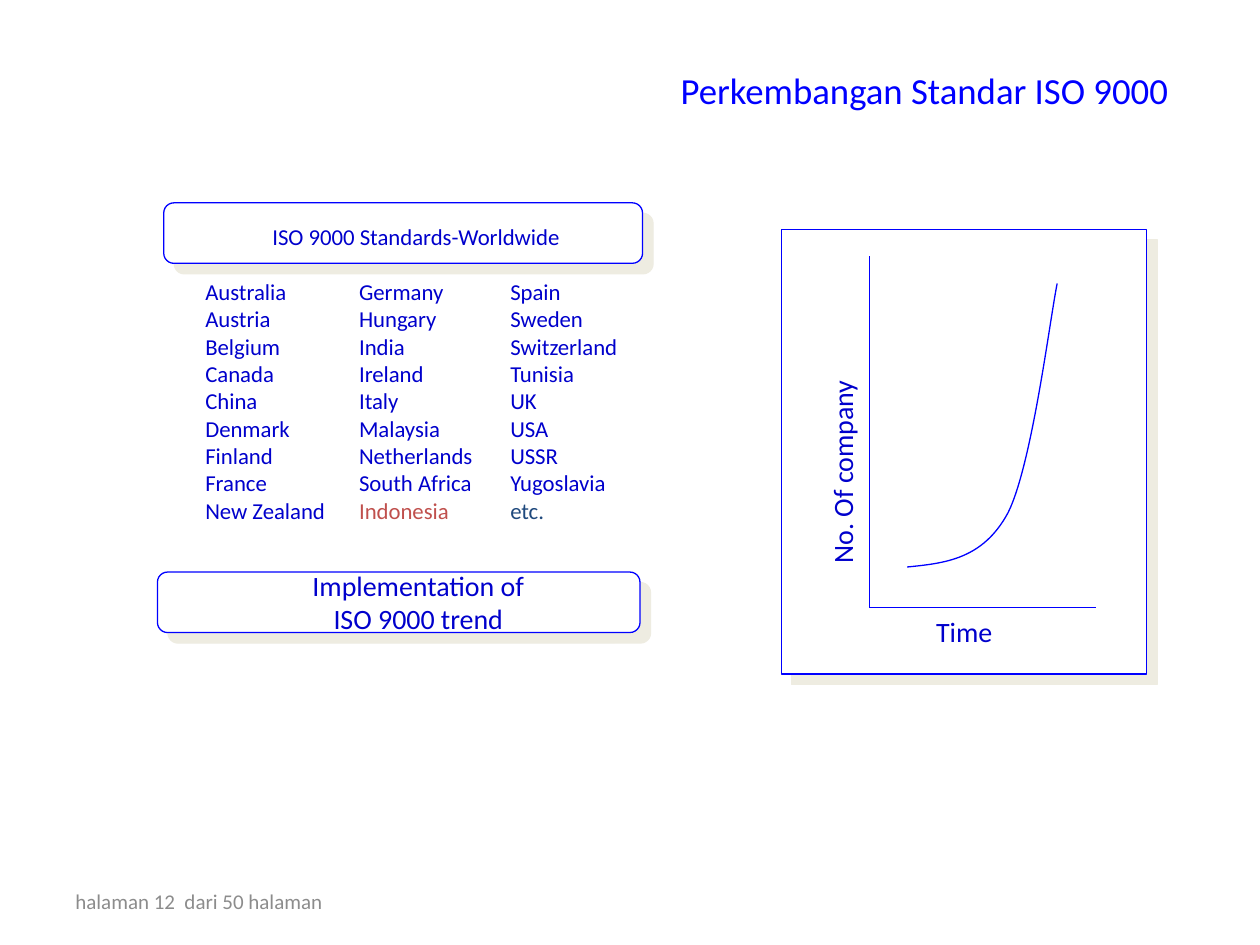
import dataclasses

import lxml.etree
import pptx
import pptx.dml.color
import pptx.enum.shapes
import pptx.enum.text
import pptx.oxml.ns
import pptx.util

Inches = pptx.util.Inches
Pt = pptx.util.Pt
qn = pptx.oxml.ns.qn
Align = pptx.enum.text.PP_ALIGN
Anchor = pptx.enum.text.MSO_ANCHOR
Shape = pptx.enum.shapes.MSO_SHAPE

COLOURS = {
    "line": "0000FF",
    "title": "0000FF",
    "text": "0000CC",
    "panel": "FFFFFF",
    "shadow": "EEECE1",
    "footer": "8C8C8C",
    "home": "C0504D",
    "rest": "1F497D",
}
FONT = "Calibri"
TAB_STOPS = (1.22, 2.42)
WIDE_INSETS = (0.13, 0.06)
COUNTRIES = (
    ("Australia", "Germany", "Spain"),
    ("Austria", "Hungary", "Sweden"),
    ("Belgium", "India", "Switzerland"),
    ("Canada", "Ireland", "Tunisia"),
    ("China", "Italy", "UK"),
    ("Denmark", "Malaysia", "USA"),
    ("Finland", "Netherlands", "USSR"),
    ("France", "South Africa", "Yugoslavia"),
    ("New Zealand", "Indonesia", "etc."),
)
SPECIAL_COLOURS = {"Indonesia": "home", "etc.": "rest"}
CURVE = (
    (7.2, 4.5),
    (7.5, 4.47), (7.8, 4.44), (8, 4.07),
    (8.19, 3.69), (8.33, 2.55), (8.39, 2.25),
)


@dataclasses.dataclass
class Panel:
    kind: Shape
    left: float
    top: float
    width: float
    height: float


@dataclasses.dataclass
class Axis:
    start: tuple[float, float]
    end: tuple[float, float]


PANELS = (
    Panel(Shape.ROUNDED_RECTANGLE, 1.3, 1.61, 3.8, 0.48),
    Panel(Shape.ROUNDED_RECTANGLE, 1.25, 4.54, 3.83, 0.48),
    Panel(Shape.RECTANGLE, 6.2, 1.82, 2.9, 3.53),
)
ORIGIN = (6.9, 4.82)
AXES = (Axis(ORIGIN, (8.7, 4.82)), Axis(ORIGIN, (6.9, 2.03)))


def colour(name: str) -> pptx.dml.color.RGBColor:
    return pptx.dml.color.RGBColor.from_string(COLOURS[name])


def style_line(line) -> None:
    line.color.rgb = colour("line")
    line.width = Pt(0.75)


def add_panel(page, panel: Panel) -> None:
    shape = page.shapes.add_shape(
        panel.kind, Inches(panel.left), Inches(panel.top),
        Inches(panel.width), Inches(panel.height),
    )
    shape.fill.solid()
    shape.fill.fore_color.rgb = colour("panel")
    style_line(shape.line)
    shape.shadow.inherit = False
    effects = shape._element.spPr.find(qn("a:effectLst"))
    shadow = lxml.etree.SubElement(
        effects, qn("a:outerShdw"), dist=str(Pt(8.5)), dir="2700000",
        algn="ctr", rotWithShape="0",
    )
    lxml.etree.SubElement(shadow, qn("a:srgbClr"), val=COLOURS["shadow"])


def add_axis(page, axis: Axis) -> None:
    connector = page.shapes.add_connector(
        pptx.enum.shapes.MSO_CONNECTOR.STRAIGHT,
        *(Inches(value) for value in axis.start + axis.end),
    )
    style_line(connector.line)
    lxml.etree.SubElement(connector._element.spPr, qn("a:effectLst"))


def add_curve(page, points: tuple) -> None:
    corners = [(Inches(x), Inches(y)) for x, y in points]
    builder = page.shapes.build_freeform(*corners[0])
    builder.add_line_segments(corners[1:], close=False)
    shape = builder.convert_to_shape()
    shape.fill.background()
    style_line(shape.line)
    shape.shadow.inherit = False
    outline = next(shape._element.iter(qn("a:path")))
    segments = outline.findall(qn("a:lnTo"))
    for first in range(0, len(segments), 3):
        bezier = lxml.etree.SubElement(outline, qn("a:cubicBezTo"))
        for segment in segments[first:first + 3]:
            bezier.append(segment[0])
            outline.remove(segment)


def add_tabs(para) -> None:
    tabs = lxml.etree.SubElement(para._p.get_or_add_pPr(), qn("a:tabLst"))
    for stop in TAB_STOPS:
        lxml.etree.SubElement(tabs, qn("a:tab"), pos=str(Inches(stop)), algn="l")


def write(para, text: str, *, size: float, tone: str = "text",
          align: Align = Align.LEFT, before: float = 0, tabbed: bool = False) -> None:
    if tabbed:
        add_tabs(para)
    para.alignment = align
    para.space_before = Pt(before)
    cells = text.split("\t")
    for index, cell in enumerate(cells):
        span = para.add_run()
        span.text = cell + ("\t" if index < len(cells) - 1 else "")
        span.font.name = FONT
        span.font.size = Pt(size)
        span.font.color.rgb = colour(SPECIAL_COLOURS.get(cell, tone))


def add_box(page, left: float, top: float, width: float, height: float, *,
            insets: tuple = WIDE_INSETS, anchor: Anchor = Anchor.TOP,
            rotation: float = 0):
    box = page.shapes.add_textbox(
        Inches(left), Inches(top), Inches(width), Inches(height)
    )
    box.rotation = rotation
    frame = box.text_frame
    frame.word_wrap = True
    frame.vertical_anchor = anchor
    frame.margin_left = frame.margin_right = Inches(insets[0])
    frame.margin_top = frame.margin_bottom = Inches(insets[1])
    return frame


def main() -> None:
    deck = pptx.Presentation()
    deck.slide_width, deck.slide_height = Inches(10), Inches(7.5)
    page = deck.slides.add_slide(deck.slide_layouts[6])

    for panel in PANELS:
        add_panel(page, panel)
    for axis in AXES:
        add_axis(page, axis)
    add_curve(page, CURVE)

    footer = add_box(page, 0.5, 6.95, 2.33, 0.4, insets=(0.1, 0.05), anchor=Anchor.MIDDLE)
    write(footer.paragraphs[0], "halaman 12  dari 50 halaman", size=12, tone="footer")

    title = add_box(page, 0.87, 0.44, 8.5, 0.54, insets=(0.1, 0.05), anchor=Anchor.MIDDLE)
    write(title.paragraphs[0], "Perkembangan Standar ISO 9000", size=21,
          tone="title", align=Align.RIGHT)

    countries = add_box(page, 1.5, 1.71, 3.6, 2.52)
    write(countries.paragraphs[0], "ISO 9000 Standards-Worldwide", size=13,
          align=Align.CENTER)
    for index, row in enumerate(COUNTRIES):
        write(countries.add_paragraph(), "\t".join(row), size=13, tabbed=True,
              before=0 if index else 15.7)

    trend = add_box(page, 1.17, 4.45, 4.3, 0.67)
    write(trend.paragraphs[0], "Implementation of", size=16, align=Align.CENTER)
    write(trend.add_paragraph(), "ISO 9000 trend", size=16, align=Align.CENTER)

    company_label = add_box(page, 5.51, 3.22, 2.36, 0.4, rotation=270)
    write(company_label.paragraphs[0], "No. Of company", size=16)
    time_label = add_box(page, 7.3, 4.82, 1.2, 0.4)
    write(time_label.paragraphs[0], "Time", size=16)

    deck.save("out.pptx")


if __name__ == "__main__":
    main()
